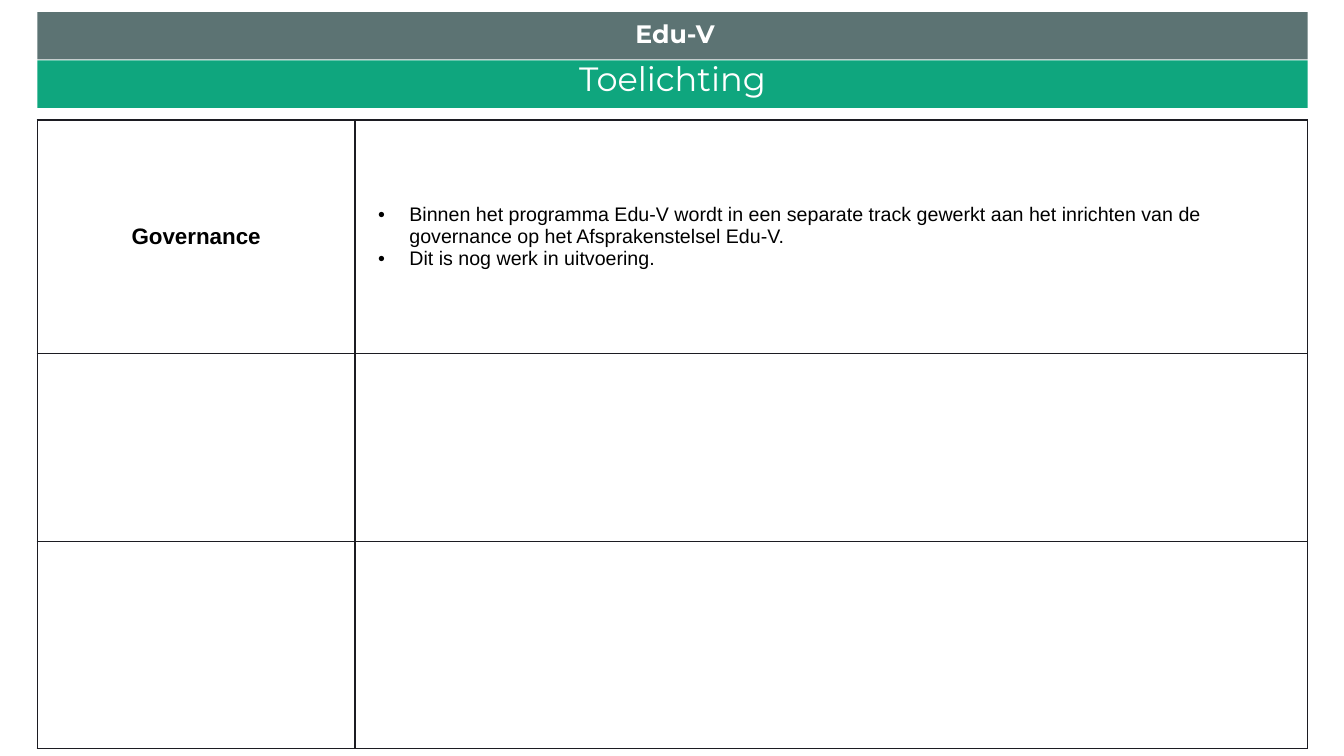
import pptx
import pptx.util
import pptx.dml.color
import pptx.enum.shapes
import pptx.enum.text
import pptx.oxml
import pptx.oxml.ns
from lxml import etree

RGBColor = pptx.dml.color.RGBColor
Inches, Pt = pptx.util.Inches, pptx.util.Pt
ALIGN, ANCHOR = pptx.enum.text.PP_ALIGN, pptx.enum.text.MSO_ANCHOR

SLATE = RGBColor(0x5C, 0x73, 0x73)
GREEN = RGBColor(0x0F, 0xA6, 0x7E)
WHITE = RGBColor(0xFF, 0xFF, 0xFF)
BLACK = RGBColor(0x00, 0x00, 0x00)
BORDER = RGBColor(0x1C, 0x1C, 0x22)

# Layout grid: four equal columns, of which the label takes one
SLIDE_W, SLIDE_H = 13.33, 7.5
LEFT, COL = 0.37, 3.15
WIDTH = 4 * COL
BAND_TOP, BAND_H, BAND_STEP = 0.12, 0.47, 0.48
TABLE_TOP = 1.19
ROWS = (2.32, 1.86, 2.06)

BULLETS = (
    "Binnen het programma Edu-V wordt in een separate track gewerkt aan het "
    "inrichten van de governance op het Afsprakenstelsel Edu-V.",
    "Dit is nog werk in uitvoering.",
)


def sub(parent, tag, **attrs):
    return etree.SubElement(parent, pptx.oxml.ns.qn(tag), **attrs)


def style(p, font, size, color, bold=False, align=ALIGN.LEFT):
    p.alignment = align
    for r in p.runs:
        r.font.name, r.font.size, r.font.bold = font, Pt(size), bold
        r.font.color.rgb = color


def set_margins(box, inset):
    box.margin_left = box.margin_right = Inches(inset)
    box.margin_top = box.margin_bottom = Inches(inset)


def add_band(s, row, color):
    sp = s.shapes.add_shape(
        pptx.enum.shapes.MSO_SHAPE.RECTANGLE, Inches(LEFT),
        Inches(BAND_TOP + row * BAND_STEP), Inches(WIDTH), Inches(BAND_H))
    sp.shadow.inherit = False
    sp.fill.solid()
    sp.fill.fore_color.rgb = color
    sp.line.fill.background()
    return sp


def set_heading(sp, text, size, anchor, bold=False):
    tf = sp.text_frame
    tf.word_wrap = True
    tf.vertical_anchor = anchor
    set_margins(tf, 0.1)
    tf.text = text
    style(tf.paragraphs[0], "Montserrat", size, WHITE, bold, ALIGN.CENTER)


def add_bullet(p):
    pPr = p._p.get_or_add_pPr()
    pPr.set("marL", str(Inches(0.49)))
    pPr.set("indent", str(Inches(-0.31)))
    sub(sub(pPr, "a:buClr"), "a:srgbClr", val=str(BLACK))
    sub(pPr, "a:buFont", typeface="Arial")
    sub(pPr, "a:buChar", char="•")


def format_cell(cell):
    tcPr = cell._tc.get_or_add_tcPr()
    for side in ("a:lnL", "a:lnR", "a:lnT", "a:lnB"):
        ln = sub(tcPr, side, w=str(Pt(1)))
        sub(sub(ln, "a:solidFill"), "a:srgbClr", val=str(BORDER))
    cell.fill.background()
    cell.vertical_anchor = ANCHOR.MIDDLE


def add_grid(s):
    frame = s.shapes.add_table(len(ROWS), 2, Inches(LEFT), Inches(TABLE_TOP),
                               Inches(WIDTH), Inches(sum(ROWS)))
    table = frame.table
    table.first_row = table.horz_banding = False
    for column, span in zip(table.columns, (1, 3)):
        column.width = Inches(span * COL)
    for row, height in zip(table.rows, ROWS):
        row.height = Inches(height)
    for cell in table.iter_cells():
        format_cell(cell)
    return table


def main():
    prs = pptx.Presentation()
    prs.slide_width, prs.slide_height = Inches(SLIDE_W), Inches(SLIDE_H)
    s = prs.slides.add_slide(prs.slide_layouts[6])

    # Header bands
    add_band(s, 0, SLATE)
    set_heading(add_band(s, 1, GREEN), "Toelichting", 24, ANCHOR.BOTTOM)
    programme = s.shapes.add_textbox(Inches(0.54), Inches(0.07),
                                     Inches(12.31), Inches(0.53))
    set_heading(programme, "Edu-V", 18, ANCHOR.MIDDLE, bold=True)

    # Table with topic and explanation
    table = add_grid(s)
    topic, explanation = table.cell(0, 0), table.cell(0, 1)
    set_margins(topic, 0.1)
    topic.text_frame.text = "Governance"
    style(topic.text_frame.paragraphs[0], "Arial", 16, BLACK, True, ALIGN.CENTER)

    set_margins(explanation, 0.05)
    explanation.text_frame.text = "\n".join(BULLETS)
    for p in explanation.text_frame.paragraphs:
        add_bullet(p)
        style(p, "Arial", 14, BLACK)

    prs.save("out.pptx")


if __name__ == "__main__":
    main()
